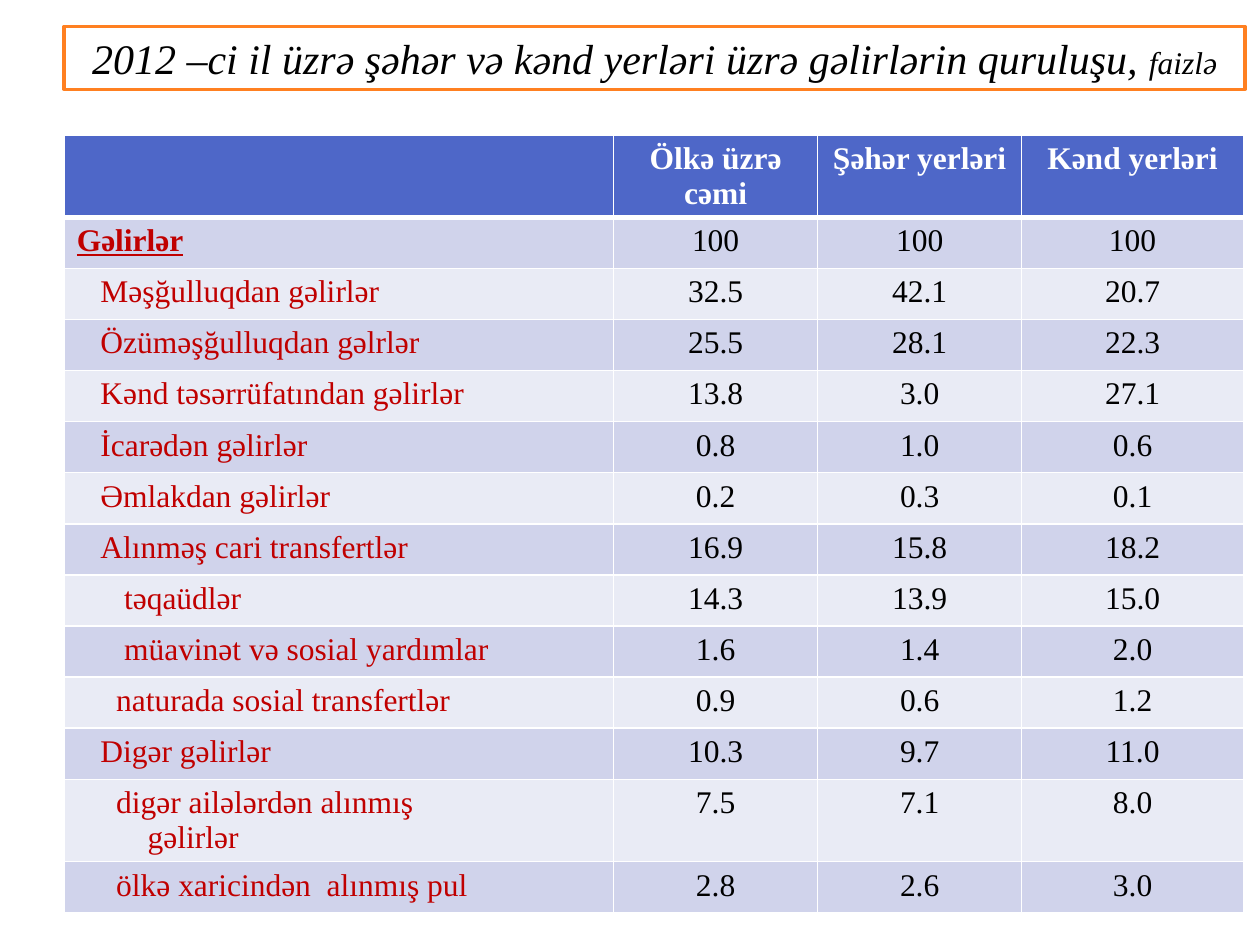
from lxml.etree import SubElement
from pptx import Presentation
from pptx.dml.color import RGBColor
from pptx.enum.text import MSO_ANCHOR, MSO_AUTO_SIZE, PP_ALIGN
from pptx.oxml.ns import qn
from pptx.util import Inches, Pt


def add_text(paragraph, text, size=18, color="000000", bold=False, italic=False,
             underline=False, align=PP_ALIGN.LEFT, indent=0):
    paragraph.alignment = align
    if indent:
        paragraph._p.get_or_add_pPr().set("marL", str(Inches(indent)))
    run = paragraph.add_run()
    run.text = text
    font = run.font
    font.name, font.size = "Times New Roman", Pt(size)
    font.bold, font.italic, font.underline = bold, italic, underline
    font.color.rgb = RGBColor.from_string(color)


def style_cell(cell, fill, bottom_width=1, top_width=1):
    properties = cell._tc.get_or_add_tcPr()
    widths = {"a:lnL": 1, "a:lnR": 1, "a:lnT": top_width, "a:lnB": bottom_width}
    for side, width in widths.items():
        border = SubElement(properties, qn(side), w=str(Pt(width)))
        SubElement(SubElement(border, qn("a:solidFill")), qn("a:srgbClr"), val="FFFFFF")
    cell.fill.solid()
    cell.fill.fore_color.rgb = RGBColor.from_string(fill)


LEFT, WIDTH = Inches(0.51), Inches(9.37)
SPACE = 0.0625  # width of one 18 pt space, the unit of the label indents

prs = Presentation()
prs.slide_width, prs.slide_height = Inches(10), Inches(7.5)
slide = prs.slides.add_slide(prs.slide_layouts[5])

# Framed title
title = slide.shapes.title
title.left, title.top, title.width, title.height = LEFT, Inches(0.21), WIDTH, Inches(0.5)
title.fill.solid()
title.fill.fore_color.rgb = RGBColor.from_string("FFFFFF")
title.line.color.rgb = RGBColor.from_string("FF8021")
title.line.width = Pt(2)
title_frame = title.text_frame
title_frame.word_wrap = True
title_frame.auto_size = MSO_AUTO_SIZE.NONE
title_frame.vertical_anchor = MSO_ANCHOR.MIDDLE
heading = title_frame.paragraphs[0]
add_text(heading, "2012 –ci il üzrə şəhər və kənd yerləri üzrə gəlirlərin quruluşu, ",
         size=24, italic=True, align=PP_ALIGN.CENTER)
add_text(heading, "faizlə", italic=True, align=PP_ALIGN.CENTER)

# Income data: label lines as (text, indent in spaces), then the three shares
headers = ["", "Ölkə üzrə cəmi", "Şəhər yerləri", "Kənd yerləri"]
incomes = [
    ([("Gəlirlər", 0)], "100", "100", "100"),
    ([("Məşğulluqdan gəlirlər", 3)], "32.5", "42.1", "20.7"),
    ([("Özüməşğulluqdan gəlrlər", 3)], "25.5", "28.1", "22.3"),
    ([("Kənd təsərrüfatından gəlirlər", 3)], "13.8", "3.0", "27.1"),
    ([("İcarədən gəlirlər", 3)], "0.8", "1.0", "0.6"),
    ([("Əmlakdan gəlirlər", 3)], "0.2", "0.3", "0.1"),
    ([("Alınməş cari transfertlər", 3)], "16.9", "15.8", "18.2"),
    ([("təqaüdlər", 6)], "14.3", "13.9", "15.0"),
    ([("müavinət və sosial yardımlar", 6)], "1.6", "1.4", "2.0"),
    ([("naturada sosial transfertlər", 5)], "0.9", "0.6", "1.2"),
    ([("Digər gəlirlər", 3)], "10.3", "9.7", "11.0"),
    ([("digər ailələrdən alınmış", 5), ("gəlirlər", 9)], "7.5", "7.1", "8.0"),
    ([("ölkə xaricindən  alınmış pul", 5)], "2.8", "2.6", "3.0"),
]

# Table grid: two-line rows are taller, the others share the rest
table_height, tall_row = Inches(6.17), Inches(0.65)
table = slide.shapes.add_table(len(incomes) + 1, len(headers), LEFT, Inches(1.07),
                               WIDTH, table_height).table
for column, width in zip(table.columns, [4.36, 1.62, 1.62, 1.76]):
    column.width = Inches(width)
plain_row = (table_height - 2 * tall_row) // (len(incomes) - 1)

# Header row
table.rows[0].height = tall_row
for column, header in enumerate(headers):
    cell = table.cell(0, column)
    style_cell(cell, "4E67C8", bottom_width=3)
    if header:
        add_text(cell.text_frame.paragraphs[0], header, color="FFFFFF", bold=True,
                 align=PP_ALIGN.CENTER)

# Income rows
for row, (label, *shares) in enumerate(incomes, start=1):
    table.rows[row].height = tall_row if len(label) > 1 else plain_row
    for column in range(len(headers)):
        style_cell(table.cell(row, column), "D0D3EB" if row % 2 else "E9EBF5",
                   top_width=3 if row == 1 else 1)
    label_frame = table.cell(row, 0).text_frame
    for line, (text, spaces) in enumerate(label):
        paragraph = label_frame.add_paragraph() if line else label_frame.paragraphs[0]
        add_text(paragraph, text, color="C00000", bold=row == 1, underline=row == 1,
                 indent=spaces * SPACE)
    for column, share in enumerate(shares, start=1):
        add_text(table.cell(row, column).text_frame.paragraphs[0], share,
                 align=PP_ALIGN.CENTER)

prs.save("out.pptx")
